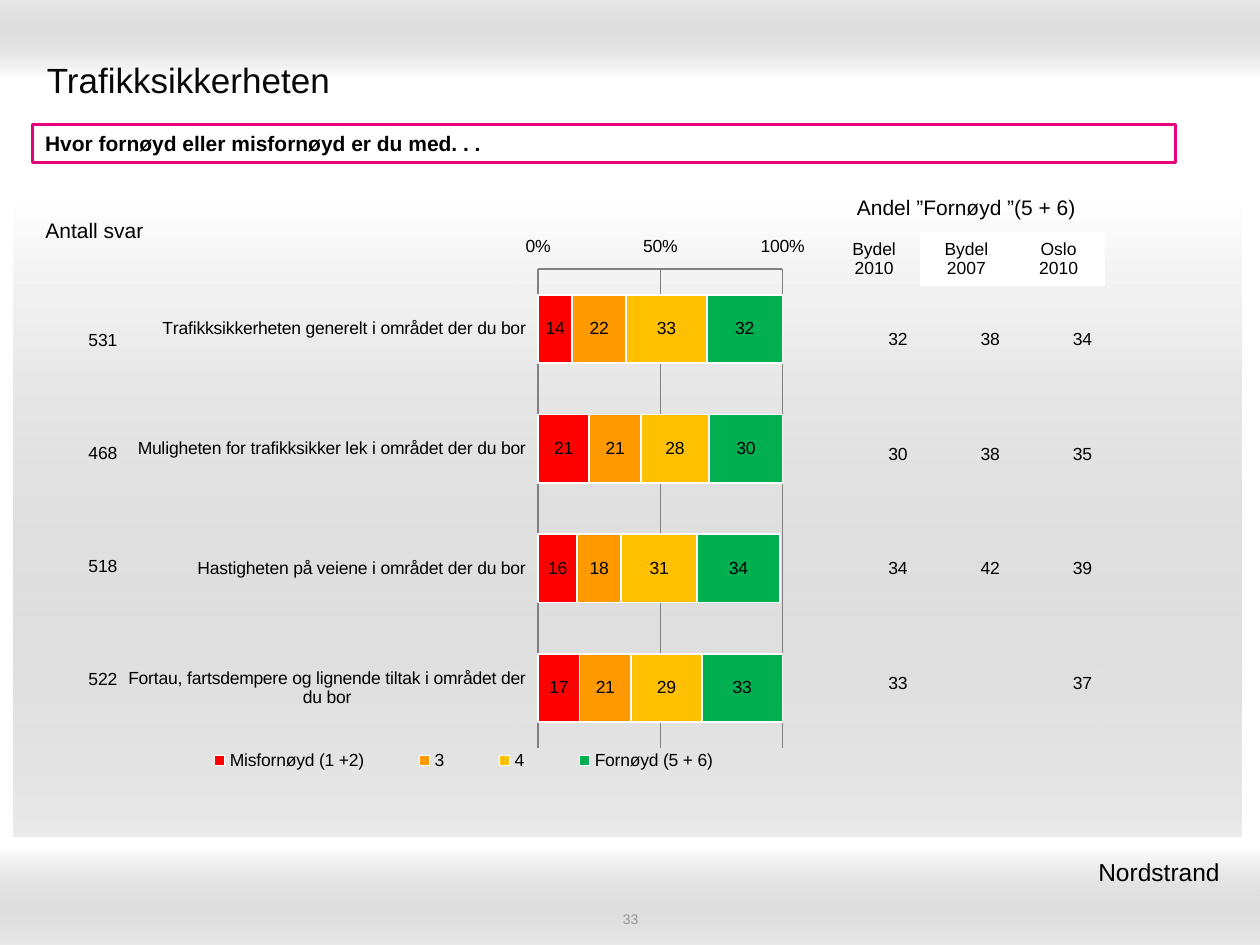
from lxml.etree import SubElement
from pptx import Presentation
from pptx.chart.data import CategoryChartData
from pptx.dml.color import RGBColor
from pptx.enum.chart import XL_CHART_TYPE, XL_LEGEND_POSITION, XL_TICK_LABEL_POSITION, XL_TICK_MARK
from pptx.enum.shapes import MSO_SHAPE
from pptx.enum.text import MSO_ANCHOR, PP_ALIGN
from pptx.oxml import parse_xml
from pptx.oxml.ns import nsdecls, qn
from pptx.util import Cm, Pt

THEME = {
    "font": "Arial", "title": 20, "place": 14, "head": 12, "body": 10, "page": 8,
    "black": "000000", "ink": "080808", "white": "FFFFFF", "gray": "969696",
    "band": "999999", "grid": "808080", "pink": "E7007E",
}
NO_STYLE = "{2D5ABB26-0587-4C30-8999-92F81FD0307C}"

TITLE = "Trafikksikkerheten"
ASK = "Hvor fornøyd eller misfornøyd er du med. . ."
PLACE = "Nordstrand"
PAGE = "33"
TOPICS = [
    "Trafikksikkerheten generelt i området der du bor",
    "Muligheten for trafikksikker lek i området der du bor",
    "Hastigheten på veiene i området der du bor",
    "Fortau, fartsdempere og lignende tiltak i området der du bor",
]
SERIES = [
    ("Misfornøyd (1 +2)", "FF0000", (14, 21, 16, 17)),
    ("3", "FF9900", (22, 21, 18, 21)),
    ("4", "FFC000", (33, 28, 31, 29)),
    ("Fornøyd (5 + 6)", "00B050", (32, 30, 34, 33)),
]
COUNTS = [["531"], ["468"], ["518"], ["522"]]
SHARES = [["32", "38", "34"], ["30", "38", "35"], ["34", "42", "39"], ["33", "", "37"]]
HEADS = [["Andel ”Fornøyd ”(5 + 6)", "", ""], ["Bydel\n2010", "Bydel\n2007", "Oslo\n2010"]]

# left, top, width, height in cm; angle
BANDS = [
    (0, 0, 25.4, 1.57, 90),
    (0, 17.07, 25.4, 1.98, 270),
    (0.28, 3.96, 24.74, 12.9, 270),
]
PLOT = (0.597, 0.076, 0.352, 0.837)
KEY = (0.06, 0.91, 0.86, 0.05)


def rgb(name):
    return RGBColor.from_string(THEME.get(name, name))


def put(obj, **vals):
    for key, val in vals.items():
        setattr(obj, key, val)


def style(font, size, color="black", bold=False):
    put(font, name=THEME["font"], size=Pt(THEME[size]), bold=bold)
    font.color.rgb = rgb(color)


def paint(fill, color):
    fill.solid()
    fill.fore_color.rgb = rgb(color)


def move(shape, *box):
    put(shape, **dict(zip(("left", "top", "width", "height"), map(Cm, box))))


def write(frame, text, size, align, **look):
    frame.text = text
    for para in frame.paragraphs:
        para.alignment = align
        style(para.font, size, **look)
        for run in para.runs:
            style(run.font, size, **look)


def add_band(slide, left, top, width, height, angle):
    """Add a strip that fades from white to see-through gray."""
    band = slide.shapes.add_shape(MSO_SHAPE.RECTANGLE, *map(Cm, (left, top, width, height)))
    band.shadow.inherit = False
    band.line.fill.background()
    band.fill.gradient()
    band.fill.gradient_angle = angle
    for stop, color, pos in zip(band.fill.gradient_stops, ("white", "band"), (0, 1)):
        stop.color.rgb = rgb(color)
        stop.position = pos
    last = band._element.xpath(".//a:gs/a:srgbClr")[-1]
    SubElement(last, qn("a:alpha"), val="20000")


def add_text(slide, box, text, size, align, **look):
    frame = slide.shapes.add_textbox(*map(Cm, box)).text_frame
    put(frame, word_wrap=True, vertical_anchor=MSO_ANCHOR.MIDDLE,
        margin_top=0, margin_bottom=0, margin_right=Cm(0.4))
    write(frame, text, size, align, **look)
    return frame


def add_grid(slide, left, top, wide, rows, data, size, align):
    """Add a plain table with equal columns and the given row heights."""
    cols = len(data[0])
    shape = slide.shapes.add_table(len(data), cols, *map(Cm, (left, top, wide * cols, sum(rows))))
    grid = shape.table
    put(grid, first_row=False, horz_banding=False)
    grid._tbl.tblPr.find(qn("a:tableStyleId")).text = NO_STYLE
    for col in grid.columns:
        col.width = Cm(wide)
    for r, (high, line) in enumerate(zip(rows, data)):
        grid.rows[r].height = Cm(high)
        for c, text in enumerate(line):
            cell = grid.cell(r, c)
            cell.vertical_anchor = MSO_ANCHOR.MIDDLE
            cell.fill.background()
            write(cell.text_frame, text, size, align)
    return grid


def lay_out(part, box, inner=False):
    """Fix the place of a chart part, as shares of the chart area."""
    for old in part.findall(qn("c:layout")):
        part.remove(old)
    target = '<c:layoutTarget val="inner"/>' if inner else ""
    modes = '<c:xMode val="edge"/><c:yMode val="edge"/>'
    sizes = "".join(f'<c:{k} val="{v}"/>' for k, v in zip("xywh", box))
    node = parse_xml(f'<c:layout {nsdecls("c")}><c:manualLayout>{target}{modes}{sizes}'
                     '</c:manualLayout></c:layout>')
    if inner:
        part.insert(0, node)
    else:
        part.find(qn("c:legendPos")).addnext(node)


def add_bars(slide, *box):
    data = CategoryChartData(number_format="0")
    data.categories = TOPICS
    for name, _, vals in SERIES:
        data.add_series(name, vals)
    chart = slide.shapes.add_chart(XL_CHART_TYPE.BAR_STACKED, *map(Cm, box), data).chart
    put(chart, has_title=False, has_legend=True)
    style(chart.font, "body")
    put(chart.legend, position=XL_LEGEND_POSITION.BOTTOM, include_in_layout=False)
    lay_out(chart.legend._element, KEY)
    plot = chart.plots[0]
    put(plot, gap_width=75, overlap=100, vary_by_categories=False)
    lay_out(chart._chartSpace.chart.plotArea, PLOT, inner=True)
    for ser, (_, color, _) in zip(plot.series, SERIES):
        paint(ser.format.fill, color)
        ser.format.line.color.rgb = rgb("white")
        ser.format.line.width = Pt(1)
        put(ser.data_labels, show_value=True, number_format="0", number_format_is_linked=False)
        style(ser.data_labels.font, "body")
    cat, val = chart.category_axis, chart.value_axis
    put(cat, reverse_order=True, major_tick_mark=XL_TICK_MARK.NONE, has_major_gridlines=False)
    put(val, minimum_scale=0, maximum_scale=100, major_unit=50,
        has_major_gridlines=True, major_tick_mark=XL_TICK_MARK.INSIDE)
    put(val.tick_labels, number_format="General\\%", number_format_is_linked=False)
    for axis in (cat, val):
        axis.tick_label_position = XL_TICK_LABEL_POSITION.LOW
        axis.format.line.color.rgb = rgb("grid")
        style(axis.tick_labels.font, "body")
    val.major_gridlines.format.line.color.rgb = rgb("grid")


def main():
    deck = Presentation()
    put(deck, slide_width=Cm(25.4), slide_height=Cm(19.05))
    slide = deck.slides.add_slide(deck.slide_layouts[5])
    for band in BANDS:
        add_band(slide, *band)

    title = slide.shapes.title
    slide.shapes._spTree.append(title._element)
    move(title, 0.69, 0.91, 24, 1.4)
    title.text_frame.vertical_anchor = MSO_ANCHOR.MIDDLE
    write(title.text_frame, TITLE, "title", PP_ALIGN.LEFT, color="ink")
    add_text(slide, (8.69, 18.34, 8.05, 0.36), PAGE, "page", PP_ALIGN.CENTER,
             color="gray").margin_right = Cm(0.25)

    ask = slide.shapes.add_shape(MSO_SHAPE.RECTANGLE, *map(Cm, (0.66, 2.51, 23.04, 0.77)))
    ask.shadow.inherit = False
    paint(ask.fill, "white")
    ask.line.color.rgb = rgb("pink")
    ask.line.width = Pt(2)
    put(ask.text_frame, margin_top=0, margin_bottom=0)
    write(ask.text_frame, ASK, "head", PP_ALIGN.LEFT, bold=True)

    add_bars(slide, 2.49, 4.55, 14, 11.53)
    add_grid(slide, 16.69, 5.69, 1.86, [2.31] * 4, SHARES, "body", PP_ALIGN.RIGHT)
    heads = add_grid(slide, 16.69, 3.73, 1.86, [0.94, 1.09], HEADS, "body", PP_ALIGN.CENTER)
    heads.cell(0, 0).merge(heads.cell(0, 2))
    write(heads.cell(0, 0).text_frame, HEADS[0][0], "head", PP_ALIGN.CENTER)
    for c in (1, 2):
        paint(heads.cell(1, c).fill, "white")
    add_grid(slide, 1.3, 5.72, 1.32, [2.28] * 4, COUNTS, "body", PP_ALIGN.RIGHT)
    add_grid(slide, 0.1, 3.91, 3.61, [1.5], [["Antall svar"]], "head", PP_ALIGN.CENTER)
    add_text(slide, (15.49, 17.15, 9.5, 0.86), PLACE, "place", PP_ALIGN.RIGHT)
    deck.save("out.pptx")


if __name__ == "__main__":
    main()
